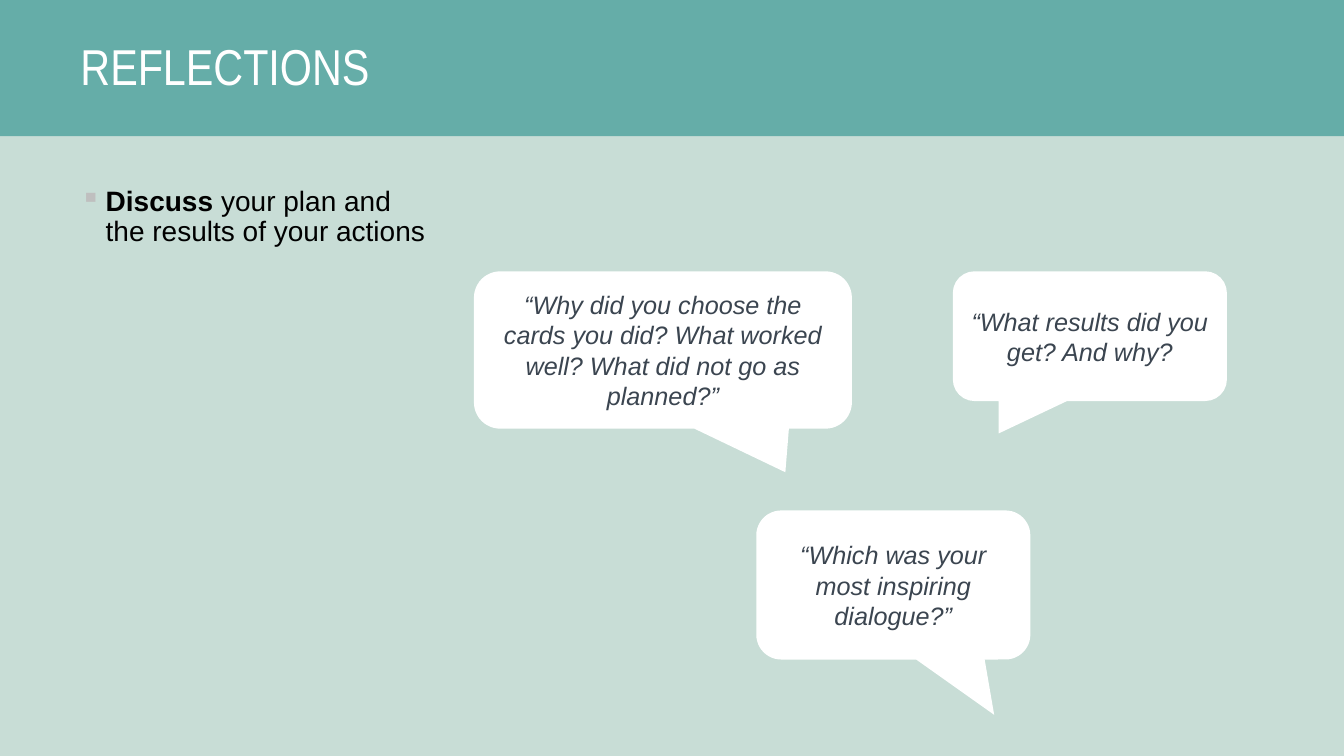
from dataclasses import dataclass

from lxml import etree
from pptx import Presentation
from pptx import util as u
from pptx.dml import color
from pptx.enum import shapes, text
from pptx.oxml import ns


@dataclass(frozen=True)
class Theme:
    background: str = "B6D4CD"
    panel: str = "C8DDD6"
    band: str = "65ADA8"
    white: str = "FFFFFF"
    black: str = "000000"
    quote: str = "3B4550"
    bullet: str = "BFBFBF"
    heading_font: str = "Arial Narrow"
    body_font: str = "Arial"
    heading_size: int = 36
    body_size: int = 20
    quote_size: int = 18


THEME = Theme()
WIDTH, HEIGHT, BAND_HEIGHT = 960, 540, 97.2
MARGIN = 50.4

# Box (left, top, width, height), tail tip (x, y as shares of the box), wording
BUBBLES = [
    ((338.5, 193.8, 270, 112.4), (0.324, 0.777),
     "“Why did you choose the cards you did? What worked well? What did not go as planned?”"),
    ((680.6, 193.8, 195.8, 92.7), (-0.333, 0.75),
     "“What results did you get? And why?"),
    ((540.2, 364.6, 195.8, 106.5), (0.368, 0.871),
     "“Which was your most inspiring dialogue?”"),
]


def points(box):
    return [u.Pt(value) for value in box]


def apply_format(target, values):
    for name, value in values.items():
        setattr(target, name, value)


def add_run(paragraph, wording, hex_color, **font_values):
    run = paragraph.add_run()
    run.text = wording
    apply_format(run.font, font_values)
    run.font.color.rgb = color.RGBColor.from_string(hex_color)


def add_filled_shape(slide, kind, box, fill):
    shape = slide.shapes.add_shape(kind, *points(box))
    shape.shadow.inherit = False
    shape.fill.solid()
    shape.fill.fore_color.rgb = color.RGBColor.from_string(fill)
    shape.line.fill.background()
    return shape


def add_text_box(slide, box, anchor):
    frame = slide.shapes.add_textbox(*points(box)).text_frame
    apply_format(frame, {"word_wrap": True, "vertical_anchor": anchor})
    paragraph = frame.paragraphs[0]
    paragraph.line_spacing = 0.9
    return paragraph


def add_bullet(paragraph, indent):
    properties = paragraph._p.get_or_add_pPr()
    properties.set("marL", str(u.Pt(indent)))
    properties.set("indent", str(-u.Pt(indent)))
    bullet_color = etree.SubElement(properties, ns.qn("a:buClr"))
    etree.SubElement(bullet_color, ns.qn("a:srgbClr"), val=THEME.bullet)
    etree.SubElement(properties, ns.qn("a:buChar"), char="▪")


def add_header(slide, box, title):
    left, top, width, height = box
    add_filled_shape(slide, shapes.MSO_SHAPE.RECTANGLE, box, THEME.band)
    title_box = (left + MARGIN, top + 6.5, width - 2 * MARGIN, height - 11.5)
    paragraph = add_text_box(slide, title_box, text.MSO_ANCHOR.MIDDLE)
    add_run(paragraph, title, THEME.white,
            name=THEME.heading_font, size=u.Pt(THEME.heading_size))


def add_task(slide, box):
    paragraph = add_text_box(slide, box, text.MSO_ANCHOR.TOP)
    add_bullet(paragraph, 18)
    for wording, bold in (("Discuss", True),
                          (" your plan and the results of your actions", False)):
        add_run(paragraph, wording, THEME.black, bold=bold,
                name=THEME.body_font, size=u.Pt(THEME.body_size))


def add_bubble(slide, box, tail, quote):
    bubble = add_filled_shape(
        slide, shapes.MSO_SHAPE.ROUNDED_RECTANGULAR_CALLOUT, box, THEME.white)
    for index, share in enumerate((*tail, 0.167)):
        bubble.adjustments[index] = share
    frame = bubble.text_frame
    apply_format(frame, {"word_wrap": True, "vertical_anchor": text.MSO_ANCHOR.MIDDLE})
    paragraph = frame.paragraphs[0]
    paragraph.alignment = text.PP_ALIGN.CENTER
    add_run(paragraph, quote, THEME.quote, italic=True,
            name=THEME.body_font, size=u.Pt(THEME.quote_size))


def add_reflections_slide(presentation):
    slide = presentation.slides.add_slide(presentation.slide_layouts[6])
    slide.background.fill.solid()
    slide.background.fill.fore_color.rgb = color.RGBColor.from_string(THEME.background)

    # Panel and header band
    add_filled_shape(slide, shapes.MSO_SHAPE.RECTANGLE,
                     (0, BAND_HEIGHT, WIDTH, HEIGHT - BAND_HEIGHT), THEME.panel)
    add_header(slide, (0, 0, WIDTH, BAND_HEIGHT), "REFLECTIONS")

    # Task on the left, questions on the right
    add_task(slide, (MARGIN, 130.3, 267.8, 371.5))
    for box, tail, quote in BUBBLES:
        add_bubble(slide, box, tail, quote)


def main():
    presentation = Presentation()
    apply_format(presentation, {"slide_width": u.Pt(WIDTH), "slide_height": u.Pt(HEIGHT)})
    add_reflections_slide(presentation)
    presentation.save("out.pptx")


if __name__ == "__main__":
    main()
